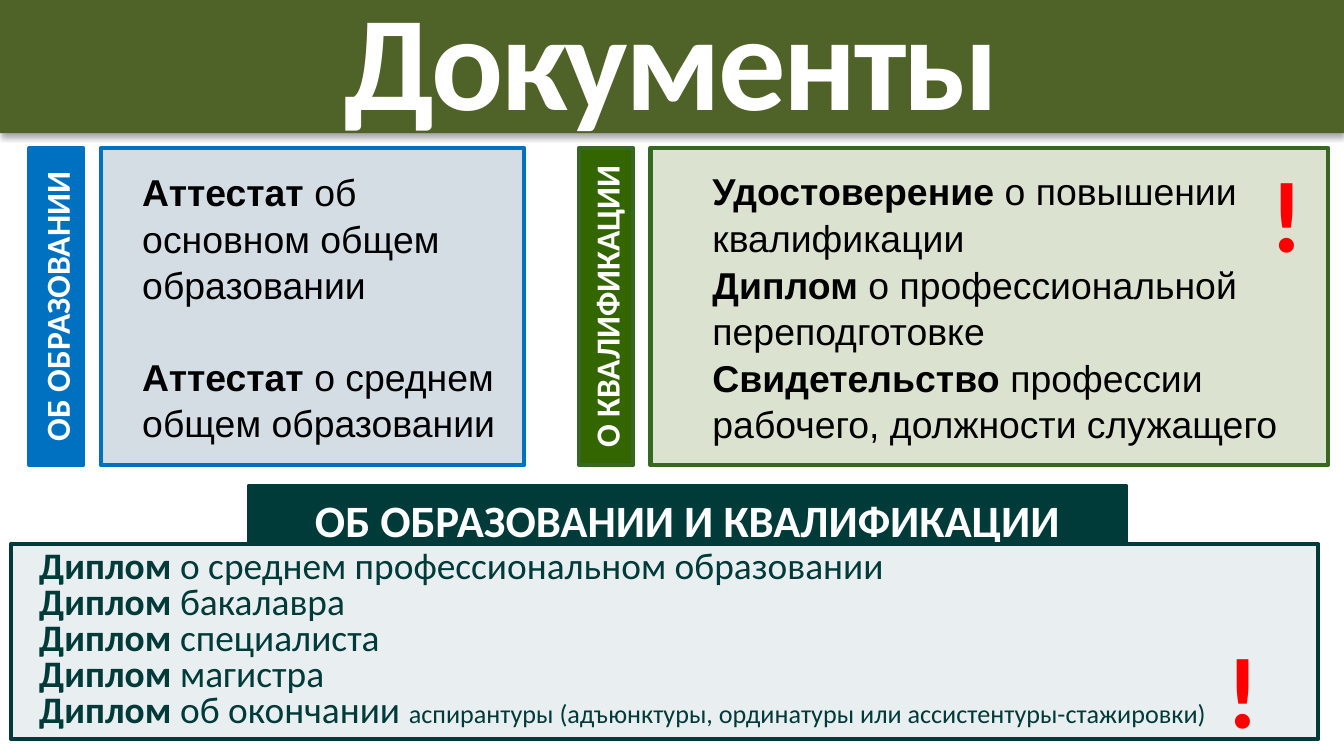
from dataclasses import dataclass

from lxml.etree import SubElement
from pptx import Presentation
from pptx.dml.color import RGBColor
from pptx.enum.shapes import MSO_SHAPE as Shape
from pptx.enum.text import MSO_ANCHOR as Anchor, MSO_AUTO_SIZE as AutoSize, PP_ALIGN as Align
from pptx.oxml.ns import qn
from pptx.util import Pt


@dataclass(frozen=True)
class Theme:
    header: str = "4F6228"
    blue: str = "0070C0"
    blue_tint: str = "D3DDE3"
    green: str = "336600"
    green_line: str = "366822"
    green_tint: str = "DCE2D0"
    teal: str = "003B3A"
    teal_tint: str = "E9EEF1"
    white: str = "FFFFFF"
    black: str = "000000"
    red: str = "FF0000"
    heading: str = "Calibri"
    body: str = "Arial"
    title_size: int = 72
    mark_size: int = 54
    bar_size: int = 24
    list_size: int = 20
    tab_size: int = 18
    small_size: int = 14
    line_width: float = 2.25


theme = Theme()


def style_box(shape, frame, fill=None, line=None, anchor=Anchor.MIDDLE, wrap=True):
    """Place a shape and set its fill, outline and text frame."""
    for name, value in zip(("left", "top", "width", "height"), frame):
        setattr(shape, name, Pt(value))
    if fill:
        shape.fill.solid()
        shape.fill.fore_color.rgb = RGBColor.from_string(fill)
    if line:
        shape.line.color.rgb = RGBColor.from_string(line)
        shape.line.width = Pt(theme.line_width)
    settings = {
        "word_wrap": wrap, "auto_size": AutoSize.NONE, "vertical_anchor": anchor,
        "margin_left": Pt(7.2), "margin_right": Pt(7.2),
        "margin_top": Pt(3.6), "margin_bottom": Pt(3.6),
    }
    for name, value in settings.items():
        setattr(shape.text_frame, name, value)


def write(paragraph, runs, font, color, align=Align.CENTER, spacing=1.0, before=0, indent=0):
    """Fill a paragraph with (text, size, bold) runs and remove its bullet."""
    layout = {"alignment": align, "line_spacing": spacing,
              "space_before": Pt(before), "space_after": Pt(0)}
    for name, value in layout.items():
        setattr(paragraph, name, value)
    properties = paragraph._p.get_or_add_pPr()
    properties.set("marL", str(Pt(indent)))
    properties.set("indent", "0")
    SubElement(properties, qn("a:buNone"))
    for text, size, bold in runs:
        run = paragraph.add_run()
        run.text = text
        for name, value in {"name": font, "size": Pt(size), "bold": bold}.items():
            setattr(run.font, name, value)
        run.font.color.rgb = RGBColor.from_string(color)


presentation = Presentation()
presentation.slide_width, presentation.slide_height = Pt(720), Pt(405)
slide = presentation.slides.add_slide(presentation.slide_layouts[4])
placeholders = {item.placeholder_format.idx: item for item in slide.placeholders}

# Title band with a soft shadow below
title = slide.shapes.title
style_box(title, (0, 0, 720, 71.3), theme.header)
write(title.text_frame.paragraphs[0], [("Документы", theme.title_size, True)],
      theme.heading, theme.white, spacing=0.9)
title.text_frame.paragraphs[0].runs[0].font._element.set("spc", "-140")
effects = SubElement(title._element.spPr, qn("a:effectLst"))
shadow = SubElement(effects, qn("a:outerShdw"), blurRad=str(Pt(3.1)), dist=str(Pt(1.8)),
                    dir="5400000", rotWithShape="0")
shadow_color = SubElement(shadow, qn("a:srgbClr"), val=theme.black)
SubElement(shadow_color, qn("a:alpha"), val="35000")

# Heading bar of the lower list
bar = placeholders[1]
style_box(bar, (133.2, 260.2, 470.2, 36), theme.teal, theme.teal)
write(bar.text_frame.paragraphs[0],
      [("ОБ ОБРАЗОВАНИИ И КВАЛИФИКАЦИИ", theme.bar_size, True)], theme.heading, theme.white)

# Lists: placeholder, frame, fill, line, anchor, paragraph format, (bold, plain, small) items
panel_top, panel_height = 79.2, 170
upper = {"font": theme.body, "color": theme.black, "spacing": 1.04}
lists = [
    (2, (54, panel_top, 226.8, panel_height), theme.blue_tint, theme.blue, Anchor.MIDDLE,
     upper | {"indent": 15}, 24, [
         ("Аттестат", " об основном общем образовании", ""),
         ("Аттестат", " о среднем общем образовании", "")]),
    (4, (348.5, panel_top, 362.9, panel_height), theme.green_tint, theme.green_line, Anchor.MIDDLE,
     upper | {"indent": 26}, 0, [
         ("Удостоверение", " о повышении квалификации", ""),
         ("Диплом", " о профессиональной переподготовке", ""),
         ("Свидетельство", " профессии рабочего, должности служащего", "")]),
    (3, (5.8, 291.6, 700.5, 104.4), theme.teal_tint, theme.teal, Anchor.TOP,
     {"font": theme.heading, "color": theme.teal, "spacing": 0.8, "indent": 8}, 0, [
         ("Диплом", " о среднем профессиональном образовании", ""),
         ("Диплом", " бакалавра", ""),
         ("Диплом", " специалиста", ""),
         ("Диплом", " магистра", ""),
         ("Диплом", " об окончании ",
          "аспирантуры (адъюнктуры, ординатуры или ассистентуры-стажировки)")]),
]
for index, frame, fill, line, anchor, text_format, gap, items in lists:
    panel = placeholders[index]
    style_box(panel, frame, fill, line, anchor)
    for number, (bold, plain, small) in enumerate(items):
        text_frame = panel.text_frame
        paragraph = text_frame.add_paragraph() if number else text_frame.paragraphs[0]
        runs = [(bold, theme.list_size, True), (plain, theme.list_size, False)]
        if small:
            runs.append((small, theme.small_size, False))
        write(paragraph, runs, align=Align.LEFT, before=gap if number else 0, **text_format)

# Vertical tabs, turned about their centres, left of the upper panels
tab_width, tab_offset = 28.8, 38.2
for text, panel_left, fill, line in [
    ("ОБ ОБРАЗОВАНИИ", 54, theme.blue, theme.blue),
    ("О КВАЛИФИКАЦИИ", 348.5, theme.green, theme.green_line),
]:
    shift = (panel_height - tab_width) / 2
    frame = (panel_left - tab_offset - shift, panel_top + shift, panel_height, tab_width)
    tab = slide.shapes.add_shape(Shape.RECTANGLE, 0, 0, 0, 0)
    style_box(tab, frame, fill, line)
    tab.shadow.inherit = False
    tab.rotation = 270
    write(tab.text_frame.paragraphs[0], [(text, theme.tab_size, True)],
          theme.heading, theme.white)

# Exclamation marks
for left, top in [(673.2, 77.8), (649.4, 332.6)]:
    mark = slide.shapes.add_textbox(0, 0, 0, 0)
    style_box(mark, (left, top, 32.4, 72.7), anchor=Anchor.TOP, wrap=False)
    write(mark.text_frame.paragraphs[0], [("!", theme.mark_size, True)],
          theme.heading, theme.red)

presentation.save("out.pptx")
